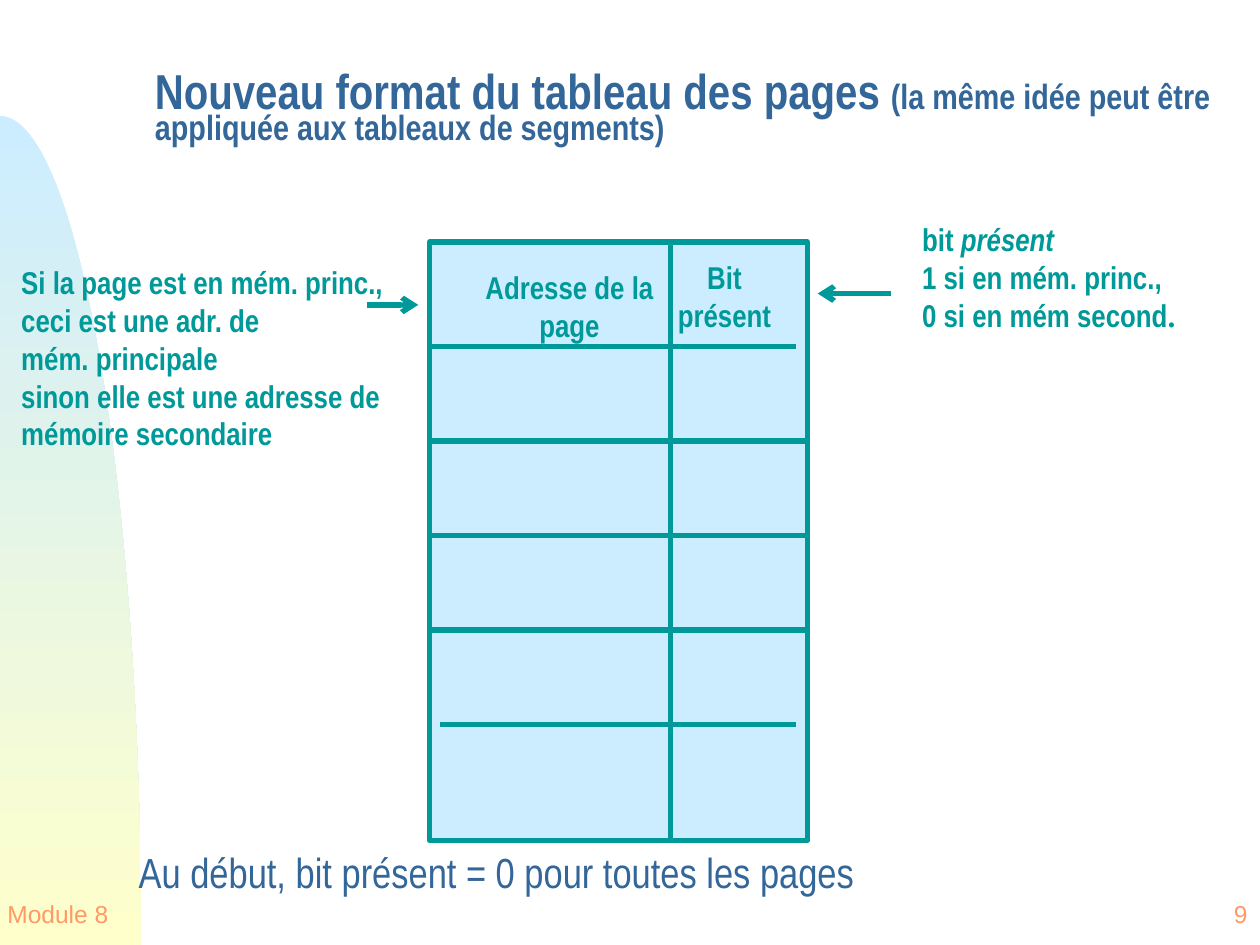
from math import cos, pi, sin

from pptx import Presentation
from pptx.dml.color import RGBColor
from pptx.enum.shapes import MSO_CONNECTOR, MSO_SHAPE
from pptx.enum.text import MSO_ANCHOR, MSO_AUTO_SIZE, PP_ALIGN
from pptx.oxml.ns import qn
from pptx.util import Inches, Pt
from lxml.etree import SubElement

COLORS = {"teal": "009999", "blue": "336699", "orange": "FF9966",
          "sky": "CCECFF", "cream": "FFFFCC"}
LABEL = {"name": "Arial Narrow", "size": Pt(18), "bold": True, "color": "teal"}
TITLE = {"name": "Arial Narrow", "size": Pt(28), "bold": True, "color": "blue"}
REMARK = {"name": "Arial Narrow", "size": Pt(24), "bold": False, "color": "blue"}
FOOTER = {"name": "Arial", "size": Pt(14), "color": "orange"}


def rgb(name):
    return RGBColor.from_string(COLORS[name])


class SlideBuilder:
    """Holds the slide and its style, and adds each kind of element."""

    line_width = Pt(3)

    def __init__(self, slide):
        self.slide = slide

    def fill_text(self, shape, paragraphs, font, align=PP_ALIGN.LEFT, wrap=True,
                  anchor=MSO_ANCHOR.TOP, spacing=1.0):
        """Each paragraph is a list of (text, changes to the font) pairs."""
        frame = shape.text_frame
        settings = {"word_wrap": wrap, "vertical_anchor": anchor,
                    "auto_size": MSO_AUTO_SIZE.NONE}
        for key, value in settings.items():
            setattr(frame, key, value)
        for index, pieces in enumerate(paragraphs):
            paragraph = frame.paragraphs[0] if index == 0 else frame.add_paragraph()
            layout = {"alignment": align, "line_spacing": spacing, "space_before": Pt(0)}
            for key, value in layout.items():
                setattr(paragraph, key, value)
            for text, changes in pieces:
                run = paragraph.add_run()
                run.text = text
                for key, value in {**font, **changes}.items():
                    if key == "color":
                        run.font.color.rgb = rgb(value)
                    else:
                        setattr(run.font, key, value)

    def text(self, box, paragraphs, font, **options):
        shape = self.slide.shapes.add_textbox(*map(Inches, box))
        self.fill_text(shape, paragraphs, font, **options)

    def placeholder(self, index, box, paragraphs, font, **options):
        shape = self.slide.placeholders[index]
        for key, value in zip(("left", "top", "width", "height"), box):
            setattr(shape, key, Inches(value))
        self.fill_text(shape, paragraphs, font, **options)
        return shape

    def rectangle(self, box):
        shape = self.slide.shapes.add_shape(MSO_SHAPE.RECTANGLE, *map(Inches, box))
        shape.shadow.inherit = False
        shape.fill.solid()
        shape.fill.fore_color.rgb = rgb("sky")
        shape.line.color.rgb = rgb("teal")
        shape.line.width = self.line_width

    def line(self, start, end, arrow=False):
        connector = self.slide.shapes.add_connector(
            MSO_CONNECTOR.STRAIGHT, *map(Inches, (*start, *end)))
        connector.line.color.rgb = rgb("teal")
        connector.line.width = self.line_width
        properties = connector._element.spPr
        if arrow:
            SubElement(properties.find(qn("a:ln")), qn("a:tailEnd"), type="arrow")
        SubElement(properties, qn("a:effectLst"))

    def quarter_ellipse(self, top, width, bottom, steps=60):
        angles = [step * pi / 2 / steps for step in range(steps + 1)]
        points = [(Inches(width * sin(angle)),
                   Inches(bottom - (bottom - top) * cos(angle))) for angle in angles]
        builder = self.slide.shapes.build_freeform(*points[0])
        builder.add_line_segments(points[1:] + [(0, Inches(bottom))], close=True)
        shape = builder.convert_to_shape()
        shape.shadow.inherit = False
        shape.line.fill.background()
        shape.fill.gradient()
        shape.fill.gradient_angle = 270
        for stop, color in zip(shape.fill.gradient_stops, ("sky", "cream")):
            stop.color.rgb = rgb(color)
        # Keep the decoration behind the placeholders
        self.slide.shapes._spTree.insert(2, shape._element)


def main():
    presentation = Presentation()
    presentation.slide_width, presentation.slide_height = Inches(10), Inches(7.5)
    slide = presentation.slides.add_slide(presentation.slide_layouts[1])
    builder = SlideBuilder(slide)

    # Background curve and footer
    builder.quarter_ellipse(top=0.92, width=1.12, bottom=7.5)
    for box, text, align in (((0, 7, 0.92, 0.5), "Module 8", PP_ALIGN.CENTER),
                             ((9.3, 7, 0.7, 0.5), "9", PP_ALIGN.RIGHT)):
        builder.text(box, [[(text, {})]], FOOTER, align=align, wrap=False,
                     anchor=MSO_ANCHOR.MIDDLE)

    # Title and closing remark
    builder.placeholder(0, (1.13, 0.36, 8.62, 1.05), [[
        ("Nouveau format du tableau des pages ", {}),
        ("(la même idée peut être appliquée aux tableaux de segments)", {"size": Pt(20)}),
    ]], TITLE, anchor=MSO_ANCHOR.MIDDLE, spacing=0.7)
    remark = builder.placeholder(1, (1, 6.67, 9, 0.5), [[
        ("Au début, bit présent = 0 pour toutes les pages", {})]], REMARK)
    properties = remark.text_frame.paragraphs[0]._p.get_or_add_pPr()
    for key in ("marL", "indent"):
        properties.set(key, "0")
    SubElement(properties, qn("a:buNone"))

    # Page table: frame, row lines and column line
    left, top, width, height = 3.41, 1.92, 3, 4.75
    right, column = left + width, 5.32
    short_left, short_right = 3.49, 6.32
    builder.rectangle((left, top, width, height))
    row_ends = [(left, short_right), (left, right), (left, right), (left, right),
                (short_left, short_right)]
    for row, (start, end) in enumerate(row_ends):
        y = 2.75 + 0.75 * row
        builder.line((start, y), (end, y))
    builder.line((column, top), (column, top + height))

    # Column headings
    for box, words in (((3.75, 2.08, 1.54, 0.7), ("Adresse de la", "page")),
                       ((5.28, 2, 0.94, 0.7), ("Bit", "présent"))):
        builder.text(box, [[(word, {})] for word in words], LABEL,
                     align=PP_ALIGN.CENTER, wrap=False)

    # Explanations and their arrows
    builder.text((7.22, 1.7, 2.22, 1), [
        [("bit ", {}), ("présent", {"italic": True})],
        [("1 si en mém. princ.,", {})],
        [("0 si en mém second", {}), (".", {"name": "Times New Roman"})],
    ], LABEL, wrap=False)
    builder.line((7.07, 2.33), (6.49, 2.33), arrow=True)
    builder.text((0.07, 2.04, 3.15, 1.6), [
        [("Si la page est en mém. princ., ceci est une adr. de", {})],
        [("mém. principale", {})],
        [("sinon elle est une adresse de mémoire secondaire", {})],
    ], LABEL)
    builder.line((2.91, 2.42), (3.32, 2.42), arrow=True)

    presentation.save("out.pptx")


if __name__ == "__main__":
    main()
